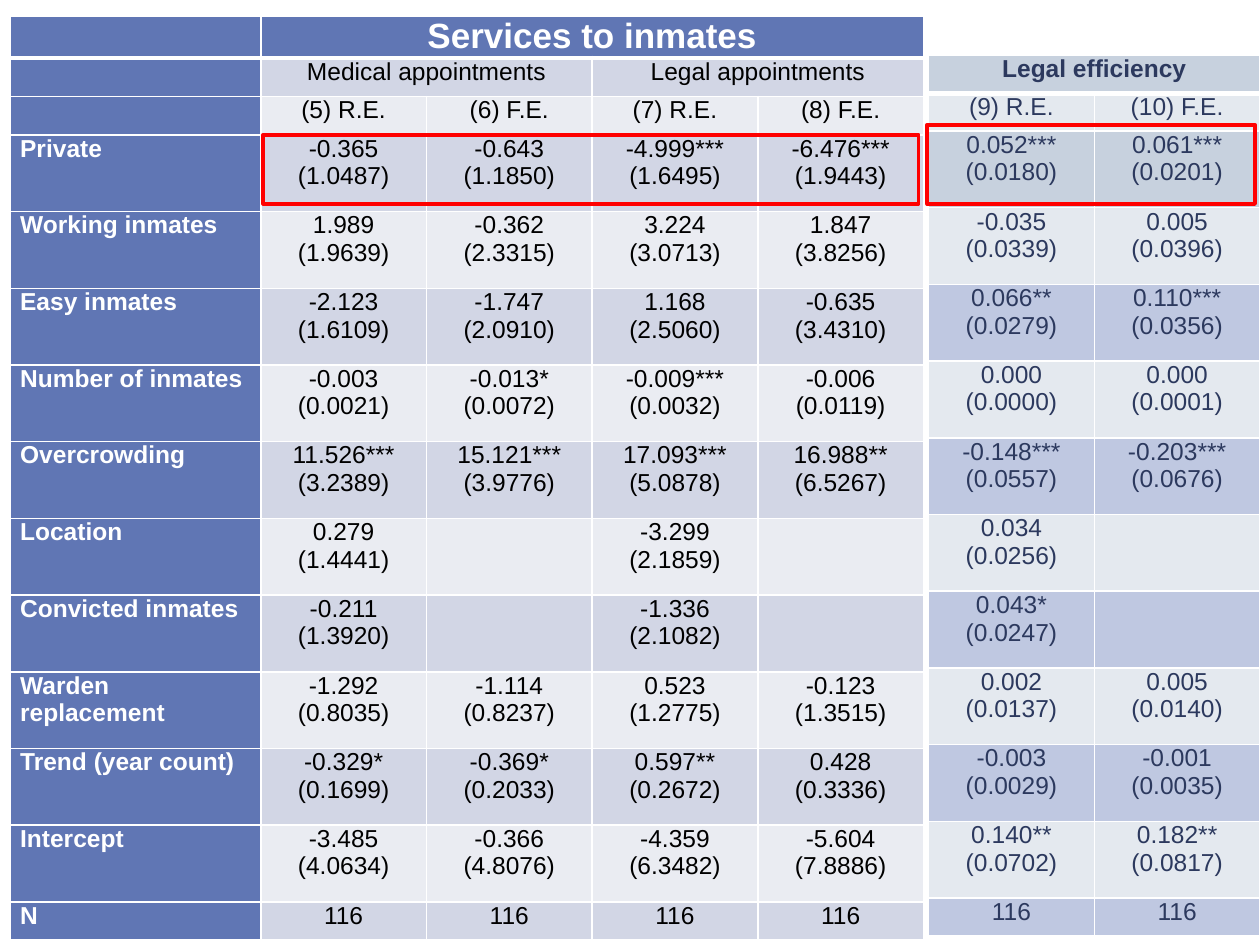
from dataclasses import dataclass
from itertools import accumulate

from lxml import etree
from pptx import Presentation
from pptx.dml.color import RGBColor
from pptx.enum.shapes import MSO_SHAPE
from pptx.enum.text import PP_ALIGN
from pptx.oxml.ns import qn
from pptx.slide import Slide
from pptx.table import _Cell
from pptx.util import Emu, Inches, Pt

RECTANGLE = MSO_SHAPE.RECTANGLE
CENTER, LEFT = PP_ALIGN.CENTER, PP_ALIGN.LEFT


@dataclass(frozen=True)
class Theme:
    font: str = "Arial"
    title_size: int = 20
    body_size: int = 14
    header: str = "6076B4"
    dark_band: str = "D2D6E5"
    light_band: str = "EAECF2"
    efficiency_header: str = "C7D1DE"
    efficiency_dark: str = "BFC8E1"
    efficiency_light: str = "E4E9EF"
    white: str = "FFFFFF"
    black: str = "000000"
    navy: str = "2C395E"
    highlight: str = "FF0000"
    thin_rule: float = 1
    thick_rule: float = 3
    frame_line: float = 2.25


THEME = Theme()


@dataclass(frozen=True)
class Heading:
    text: str
    span: int = 1
    size: int = THEME.body_size
    color: str = THEME.black
    bold: bool = False


@dataclass(frozen=True)
class Variable:
    label: str
    estimates: tuple[str, ...]


@dataclass(frozen=True)
class Frame:
    row: int
    shift_x: float
    shift_y: float
    extra_width: float
    extra_height: float


@dataclass(frozen=True)
class Panel:
    left: float
    top: float
    headings: tuple[tuple[Heading, ...], ...]
    models: slice
    label_columns: int
    column_widths: tuple[float, ...]
    row_heights: tuple[float, ...]
    bands: tuple[str, ...]
    color: str
    frame: Frame


TITLE_ROW, SINGLE_ROW = 0.33, 0.3
ESTIMATE_ROW = (7.32 - TITLE_ROW - 3 * SINGLE_ROW) / 10
LABEL_COLUMN = 1.99
MODEL_COLUMN = (7.25 - LABEL_COLUMN) / 4
ESTIMATE_ROWS = (ESTIMATE_ROW,) * 10 + (SINGLE_ROW,)

VARIABLES = (
    Variable("Private", ("-0.365 (1.0487)", "-0.643 (1.1850)", "-4.999*** (1.6495)",
                         "-6.476*** (1.9443)", "0.052*** (0.0180)", "0.061*** (0.0201)")),
    Variable("Working inmates", ("1.989 (1.9639)", "-0.362 (2.3315)", "3.224 (3.0713)",
                                 "1.847 (3.8256)", "-0.035 (0.0339)", "0.005 (0.0396)")),
    Variable("Easy inmates", ("-2.123 (1.6109)", "-1.747 (2.0910)", "1.168 (2.5060)",
                              "-0.635 (3.4310)", "0.066** (0.0279)", "0.110*** (0.0356)")),
    Variable("Number of inmates", ("-0.003 (0.0021)", "-0.013* (0.0072)", "-0.009*** (0.0032)",
                                   "-0.006 (0.0119)", "0.000 (0.0000)", "0.000 (0.0001)")),
    Variable("Overcrowding", ("11.526*** (3.2389)", "15.121*** (3.9776)", "17.093*** (5.0878)",
                              "16.988** (6.5267)", "-0.148*** (0.0557)", "-0.203*** (0.0676)")),
    Variable("Location", ("0.279 (1.4441)", "", "-3.299 (2.1859)", "", "0.034 (0.0256)", "")),
    Variable("Convicted inmates", ("-0.211 (1.3920)", "", "-1.336 (2.1082)", "",
                                   "0.043* (0.0247)", "")),
    Variable("Warden replacement", ("-1.292 (0.8035)", "-1.114 (0.8237)", "0.523 (1.2775)",
                                    "-0.123 (1.3515)", "0.002 (0.0137)", "0.005 (0.0140)")),
    Variable("Trend (year count)", ("-0.329* (0.1699)", "-0.369* (0.2033)", "0.597** (0.2672)",
                                    "0.428 (0.3336)", "-0.003 (0.0029)", "-0.001 (0.0035)")),
    Variable("Intercept", ("-3.485 (4.0634)", "-0.366 (4.8076)", "-4.359 (6.3482)",
                           "-5.604 (7.8886)", "0.140** (0.0702)", "0.182** (0.0817)")),
    Variable("N", ("116",) * 6),
)

SERVICES = Panel(
    left=0.08, top=0.13,
    headings=(
        (Heading("Services to inmates", 4, THEME.title_size, THEME.white, True),),
        (Heading("Medical appointments", 2), Heading("Legal appointments", 2)),
        tuple(Heading(name) for name in ("(5) R.E.", "(6) F.E.", "(7) R.E.", "(8) F.E.")),
    ),
    models=slice(0, 4),
    label_columns=1,
    column_widths=(LABEL_COLUMN,) + (MODEL_COLUMN,) * 4,
    row_heights=(TITLE_ROW, SINGLE_ROW, SINGLE_ROW) + ESTIMATE_ROWS,
    bands=(THEME.header,) + (THEME.dark_band, THEME.light_band) * 6 + (THEME.dark_band,),
    color=THEME.black,
    frame=Frame(3, 0.02, 0.01, -0.06, -0.06),
)

EFFICIENCY = Panel(
    left=7.37, top=0.44,
    headings=(
        (Heading("Legal efficiency", 2, color=THEME.navy, bold=True),),
        tuple(Heading(name, color=THEME.navy) for name in ("(9) R.E.", "(10) F.E.")),
    ),
    models=slice(4, 6),
    label_columns=0,
    column_widths=(MODEL_COLUMN,) * 2,
    row_heights=(SINGLE_ROW, SINGLE_ROW) + ESTIMATE_ROWS,
    bands=(THEME.efficiency_header, THEME.efficiency_light) * 2
    + (THEME.efficiency_dark, THEME.efficiency_light) * 4 + (THEME.efficiency_dark,),
    color=THEME.navy,
    frame=Frame(2, -0.01, -0.05, -0.03, 0.02),
)


def style_cell(cell: _Cell, fill: str, row: int) -> None:
    cell.margin_left = cell.margin_right = Inches(0.08)
    cell.margin_top = cell.margin_bottom = 0
    thick_side = {0: "lnB", 1: "lnT"}.get(row)
    properties = cell._tc.get_or_add_tcPr()
    for side in ("lnL", "lnR", "lnT", "lnB"):
        width = THEME.thick_rule if side == thick_side else THEME.thin_rule
        rule = etree.SubElement(properties, qn(f"a:{side}"), w=str(Pt(width)))
        paint = etree.SubElement(rule, qn("a:solidFill"))
        etree.SubElement(paint, qn("a:srgbClr"), val=THEME.white)
    cell.fill.solid()
    cell.fill.fore_color.rgb = RGBColor.from_string(fill)


def write_cell(cell: _Cell, heading: Heading, align: PP_ALIGN = CENTER) -> None:
    cell.text_frame.text = heading.text
    for paragraph in cell.text_frame.paragraphs:
        paragraph.alignment = align
        for run in paragraph.runs:
            run.font.name = THEME.font
            run.font.size = Pt(heading.size)
            run.font.bold = heading.bold
            run.font.color.rgb = RGBColor.from_string(heading.color)


def draw_panel(slide: Slide, panel: Panel) -> None:
    widths, heights = panel.column_widths, panel.row_heights
    table = slide.shapes.add_table(
        len(heights), len(widths), Inches(panel.left), Inches(panel.top),
        Inches(sum(widths)), Inches(sum(heights))).table
    table.first_row = table.horz_banding = False
    for column, width in zip(table.columns, widths):
        column.width = Inches(width)
    for row, (height, band) in enumerate(zip(heights, panel.bands)):
        table.rows[row].height = Inches(height)
        for column in range(len(widths)):
            fill = THEME.header if column < panel.label_columns else band
            style_cell(table.cell(row, column), fill, row)

    for row, headings in enumerate(panel.headings):
        column = panel.label_columns
        for heading in headings:
            cell = table.cell(row, column)
            if heading.span > 1:
                cell.merge(table.cell(row, column + heading.span - 1))
            write_cell(cell, heading)
            column += heading.span

    for row, variable in enumerate(VARIABLES, len(panel.headings)):
        if panel.label_columns:
            label = Heading(variable.label, color=THEME.white, bold=True)
            write_cell(table.cell(row, 0), label, LEFT)
        for column, estimate in enumerate(variable.estimates[panel.models], panel.label_columns):
            stacked = Heading(estimate.replace(" ", "\n"), color=panel.color)
            write_cell(table.cell(row, column), stacked)


def draw_frame(slide: Slide, panel: Panel) -> None:
    frame = panel.frame
    row_tops = tuple(accumulate(panel.row_heights, initial=panel.top))
    left = panel.left + sum(panel.column_widths[:panel.label_columns]) + frame.shift_x
    width = sum(panel.column_widths[panel.label_columns:]) + frame.extra_width
    highlight = slide.shapes.add_shape(
        RECTANGLE, Inches(left), Inches(row_tops[frame.row] + frame.shift_y),
        Inches(width), Inches(panel.row_heights[frame.row] + frame.extra_height))
    highlight.shadow.inherit = False
    highlight.fill.background()
    highlight.line.color.rgb = RGBColor.from_string(THEME.highlight)
    highlight.line.width = Emu(Pt(THEME.frame_line))


def main() -> None:
    deck = Presentation()
    deck.slide_width, deck.slide_height = Inches(10), Inches(7.5)
    slide = deck.slides.add_slide(deck.slide_layouts[6])
    for panel in (SERVICES, EFFICIENCY):
        draw_panel(slide, panel)
        draw_frame(slide, panel)
    deck.save("out.pptx")


if __name__ == "__main__":
    main()
